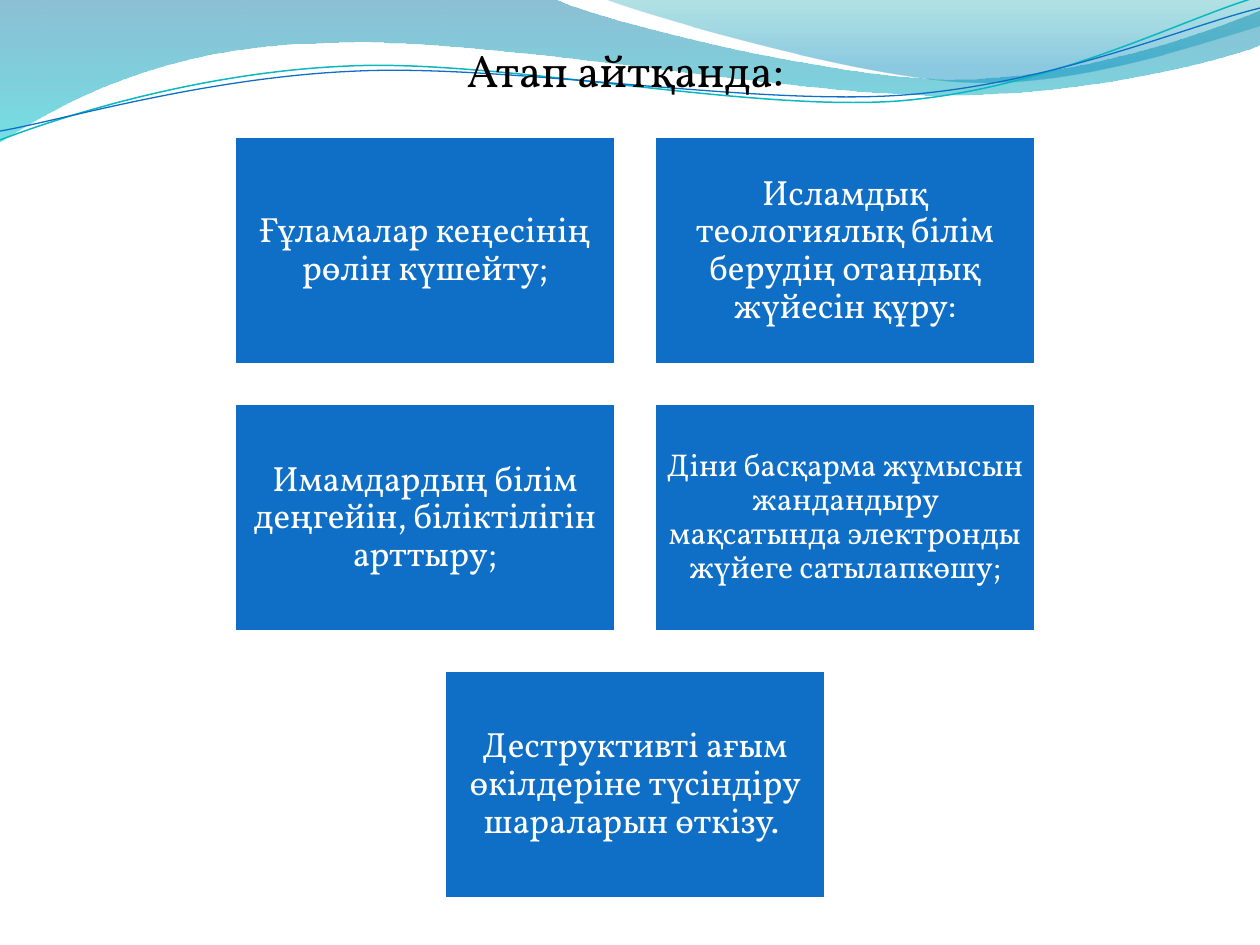
"""Build a slide with a wave banner, a heading and five centred tiles."""
import math
from dataclasses import dataclass
from typing import Any

from lxml import etree
from pptx import Presentation
from pptx import util as u
from pptx.dml.color import RGBColor
from pptx.enum import shapes, text
from pptx.oxml import ns

PX = 914400 / 126
FONT = "Vollkorn"
COLORS = {
    "tile": "0F6FC6", "white": "FFFFFF", "black": "000000",
    "teal_line": "0AB8BF", "deep_blue": "0074A1", "cyan": "00C6CF",
    "teal": "00A1A9", "sea_blue": "008BBF",
}
TILE_W, TILE_H = 382, 229
LEFT, TOP, STEP_X, STEP_Y = 234, 136, 420, 267
PIVOT = (628, 73)
TILT = 357.3

Point = tuple[float, float]


@dataclass(frozen=True)
class Stop:
    position: float
    color: str
    alpha: int


@dataclass(frozen=True)
class Wave:
    start: Point
    segments: tuple[tuple[Point, ...], ...]
    stops: tuple[Stop, ...] = ()
    line: str = ""
    width: float = 0
    rotation: float = 0


@dataclass(frozen=True)
class Tile:
    column: float
    row: int
    label: str
    size: int = 20
    inset: int = 10


WAVES = (
    Wave((0, 0), (
        ((554, -1),),
        ((600, 21), (837, 79), (955, 79)),
        ((1074, 79), (1207, 33), (1260, 11)),
        ((1261, 45),),
        ((1239, 55), (1096, 96), (940, 95)),
        ((784, 95), (481, 35), (324, 43)),
        ((163, 45), (58, 105), (-1, 142)),
        ((0, 0),),
    ), stops=(Stop(0, "deep_blue", 45), Stop(1, "cyan", 55))),
    Wave((604, -1), (
        ((641, 14), (859, 78), (969, 82)),
        ((1079, 87), (1211, 40), (1260, 26)),
        ((1260, 0),),
        ((604, -1),),
    ), stops=(Stop(0, "teal", 30), Stop(0.8, "sea_blue", 45))),
    Wave((0, 140), (
        ((60, 117), (199, 72), (349, 66)),
        ((498, 59), (747, 112), (898, 101)),
        ((1050, 89), (1182, 19), (1257, -3)),
    ), line="teal_line", width=0.85, rotation=TILT),
    Wave((0, 131), (
        ((59, 121), (206, 77), (357, 71)),
        ((508, 64), (752, 106), (903, 95)),
        ((1053, 84), (1186, 26), (1260, 8)),
    ), line="tile", width=0.75, rotation=TILT),
)

TILES = (
    Tile(0, 0, "Ғұламалар кеңесінің рөлін күшейту;"),
    Tile(1, 0, "Исламдық теологиялық білім берудің отандық жүйесін құру:"),
    Tile(0, 1, "Имамдардың білім деңгейін, біліктілігін арттыру;"),
    Tile(1, 1, "Діни басқарма жұмысын жандандыру мақсатында электронды "
               "жүйеге сатылапкөшу;", size=18, inset=9),
    Tile(0.5, 2, "Деструктивті ағым өкілдеріне түсіндіру шараларын өткізу. "),
)


def emu(px: float) -> int:
    return round(px * PX)


def rgb(name: str) -> RGBColor:
    return RGBColor.from_string(COLORS[name])


def apply(target: Any, values: dict[str, Any]) -> None:
    for name, value in values.items():
        setattr(target, name, value)


def unrotate(point: Point, degrees: float) -> tuple[int, int]:
    dx, dy = point[0] - PIVOT[0], point[1] - PIVOT[1]
    angle = math.radians(-degrees)
    return (emu(PIVOT[0] + dx * math.cos(angle) - dy * math.sin(angle)),
            emu(PIVOT[1] + dx * math.sin(angle) + dy * math.cos(angle)))


def outline(s: Any, wave: Wave) -> Any:
    start = unrotate(wave.start, wave.rotation)
    segments = [[unrotate(point, wave.rotation) for point in segment]
                for segment in wave.segments]
    builder = s.shapes.build_freeform(*start)
    builder.add_line_segments([segment[-1] for segment in segments],
                              close=bool(wave.stops))
    sp = builder.convert_to_shape()
    for node, segment in zip(list(sp.element.iter(ns.qn("a:lnTo"))), segments):
        if len(segment) == 3:
            curve = etree.Element(ns.qn("a:cubicBezTo"))
            for x, y in segment:
                etree.SubElement(curve, ns.qn("a:pt"),
                                 x=str(x - sp.left), y=str(y - sp.top))
            node.getparent().replace(node, curve)
    sp.rotation = wave.rotation
    return sp


def draw_wave(s: Any, wave: Wave) -> None:
    sp = outline(s, wave)
    sp.shadow.inherit = False
    if not wave.stops:
        sp.fill.background()
        sp.line.color.rgb = rgb(wave.line)
        sp.line.width = u.Pt(wave.width)
        return
    sp.line.fill.background()
    sp.fill.gradient()
    sp.fill.gradient_angle = 270
    for target, stop in zip(sp.fill.gradient_stops, wave.stops):
        target.position = stop.position
        target.color.rgb = rgb(stop.color)
    for color, stop in zip(sp.element.iter(ns.qn("a:srgbClr")), wave.stops):
        etree.SubElement(color, ns.qn("a:alpha"), val=str(stop.alpha * 1000))


def write(p: Any, label: str, size: int, color: str) -> None:
    p.alignment = text.PP_ALIGN.CENTER
    r = p.add_run()
    r.text = label
    apply(r.font, {"name": FONT, "size": u.Pt(size)})
    r.font.color.rgb = rgb(color)


def draw_heading(s: Any, label: str) -> None:
    sp = s.placeholders[1]
    apply(sp, {"left": emu(63), "top": emu(36),
               "width": emu(1134), "height": emu(863)})
    p = sp.text_frame.paragraphs[0]
    write(p, label, 26, "black")
    props = sp.element.find(f".//{ns.qn('a:pPr')}")
    props.set("marL", str(emu(38)))
    props.set("indent", str(-emu(38)))
    etree.SubElement(props, ns.qn("a:buNone"))
    s.shapes.element.append(sp.element)


def draw_tile(s: Any, tile: Tile) -> None:
    sp = s.shapes.add_shape(
        shapes.MSO_SHAPE.RECTANGLE,
        emu(LEFT + tile.column * STEP_X), emu(TOP + tile.row * STEP_Y),
        emu(TILE_W), emu(TILE_H))
    sp.shadow.inherit = False
    sp.fill.solid()
    sp.fill.fore_color.rgb = rgb("tile")
    sp.line.color.rgb = rgb("white")
    sp.line.width = u.Pt(2)
    tf = sp.text_frame
    apply(tf, {"word_wrap": True, "vertical_anchor": text.MSO_ANCHOR.MIDDLE})
    apply(tf, {f"margin_{side}": emu(tile.inset)
               for side in ("left", "top", "right", "bottom")})
    p = tf.paragraphs[0]
    apply(p, {"line_spacing": 0.9, "space_after": u.Pt(7)})
    write(p, tile.label, tile.size, "white")


def main() -> None:
    prs = Presentation()
    apply(prs, {"slide_width": emu(1260), "slide_height": emu(945)})
    s = prs.slides.add_slide(prs.slide_layouts[1])
    title = s.shapes.title.element
    title.getparent().remove(title)
    for wave in WAVES:
        draw_wave(s, wave)
    draw_heading(s, "Атап айтқанда: ")
    for tile in TILES:
        draw_tile(s, tile)
    prs.save("out.pptx")


if __name__ == "__main__":
    main()
